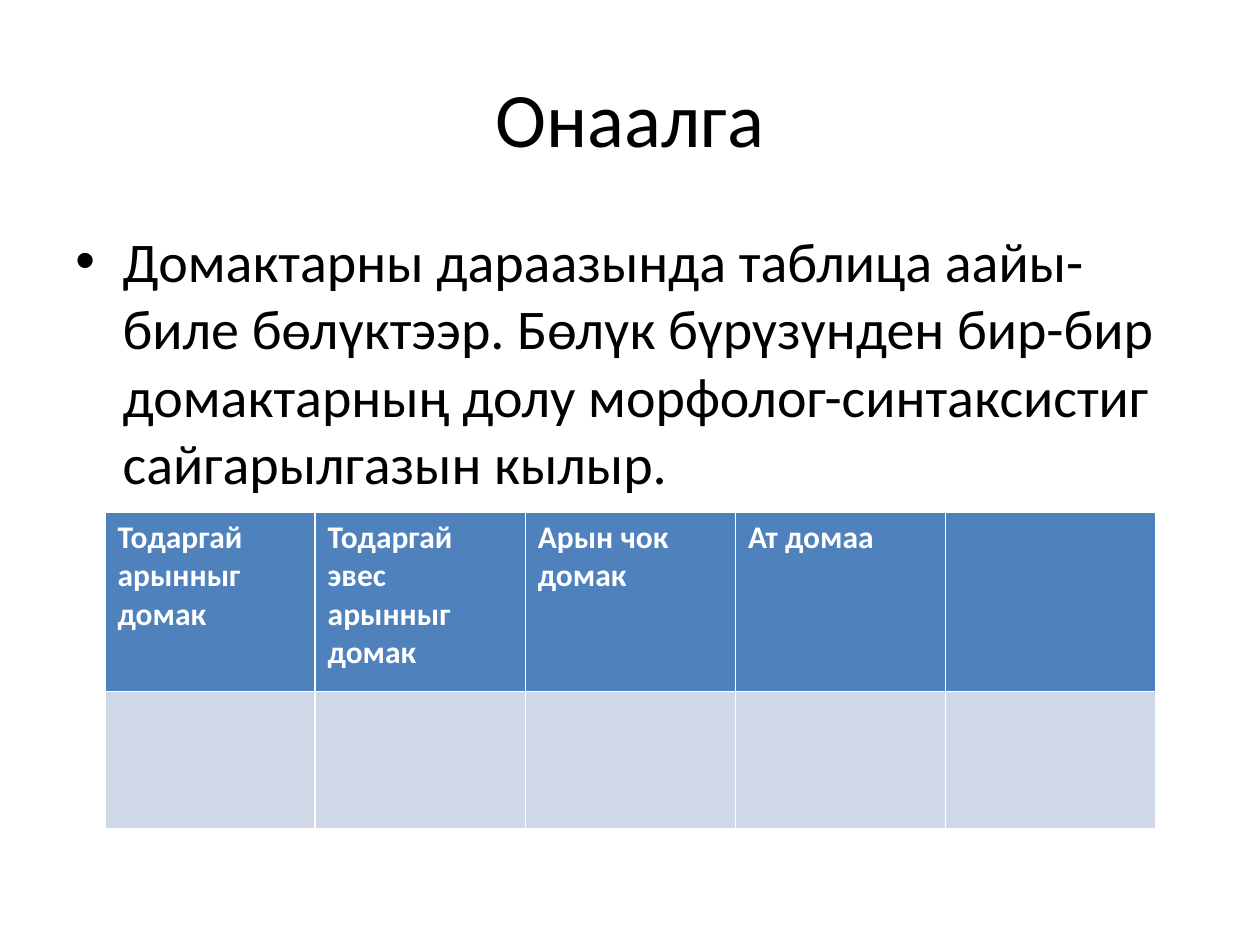
"""Build a task slide with a title, one bullet and a sorting table."""
import pptx
import pptx.dml.color
import pptx.enum.text
import pptx.oxml
import pptx.oxml.ns
import pptx.util

Pt = pptx.util.Pt
ALIGN = pptx.enum.text.PP_ALIGN
ANCHOR = pptx.enum.text.MSO_ANCHOR

TITLE = "Онаалга"
TASK = (
    "Домактарны дараазында таблица аайы-биле бөлүктээр. "
    "Бөлүк бүрүзүнден бир-бир домактарның долу "
    "морфолог-синтаксистиг сайгарылгазын кылыр."
)
HEADS = [
    "Тодаргай арынныг домак",
    "Тодаргай эвес арынныг домак",
    "Арын чок домак",
    "Ат домаа",
    "",
]


def paint(item, tone):
    """Give a fill or font a solid colour from a hex string."""
    color = pptx.dml.color.RGBColor.from_string(tone)
    if hasattr(item, "solid"):
        item.solid()
        item.fore_color.rgb = color
    else:
        item.color.rgb = color


def style(para, size, tone, bold=False):
    """Set the font of a paragraph."""
    font = para.font
    font.name, font.size, font.bold = "Calibri", Pt(size), bold
    paint(font, tone)


def add_text(slide, box, text, size, anchor):
    """Add a wrapped text box and return its paragraph."""
    frame = slide.shapes.add_textbox(*map(Pt, box)).text_frame
    frame.word_wrap = True
    frame.vertical_anchor = anchor
    para = frame.paragraphs[0]
    para.text = text
    style(para, size, "000000")
    return para


def add_bullet(para, indent):
    """Put a hanging round bullet before a paragraph."""
    props = para._p.get_or_add_pPr()
    props.set("marL", str(Pt(indent)))
    props.set("indent", str(Pt(-indent)))
    space = pptx.oxml.ns.nsdecls("a")
    for part in ('buFont {} typeface="Arial"', 'buChar {} char="•"'):
        props.append(pptx.oxml.parse_xml(f"<a:{part.format(space)}/>"))


def add_grid(slide, box, heads, heights):
    """Add a table with a header row and an empty row to fill in."""
    frame = slide.shapes.add_table(len(heights), len(heads), *map(Pt, box))
    table = frame.table
    for col in table.columns:
        col.width = Pt(box[2] / len(heads))
    for row, height in zip(table.rows, heights):
        row.height = Pt(height)
    rows = [(heads, "4F81BD", "FFFFFF"), ([""] * len(heads), "D0D8E8", "000000")]
    for row, (texts, fill, tone) in zip(table.rows, rows):
        for cell, text in zip(row.cells, texts):
            cell.text = text
            paint(cell.fill, fill)
            style(cell.text_frame.paragraphs[0], 18, tone, texts is heads)


def main():
    """Build and save the slide."""
    deck = pptx.Presentation()
    deck.slide_width, deck.slide_height = Pt(720), Pt(540)
    slide = deck.slides.add_slide(deck.slide_layouts[6])
    title = add_text(slide, (36, 21.6, 648, 90), TITLE, 44, ANCHOR.MIDDLE)
    title.alignment = ALIGN.CENTER
    task = add_text(slide, (36, 126, 648, 356.4), TASK, 32, ANCHOR.TOP)
    task.space_before = Pt(6.4)
    add_bullet(task, 27)
    heights = 102.6, 78.5
    add_grid(slide, (60, 292.5, 600.5, sum(heights)), HEADS, heights)
    deck.save("out.pptx")


if __name__ == "__main__":
    main()
